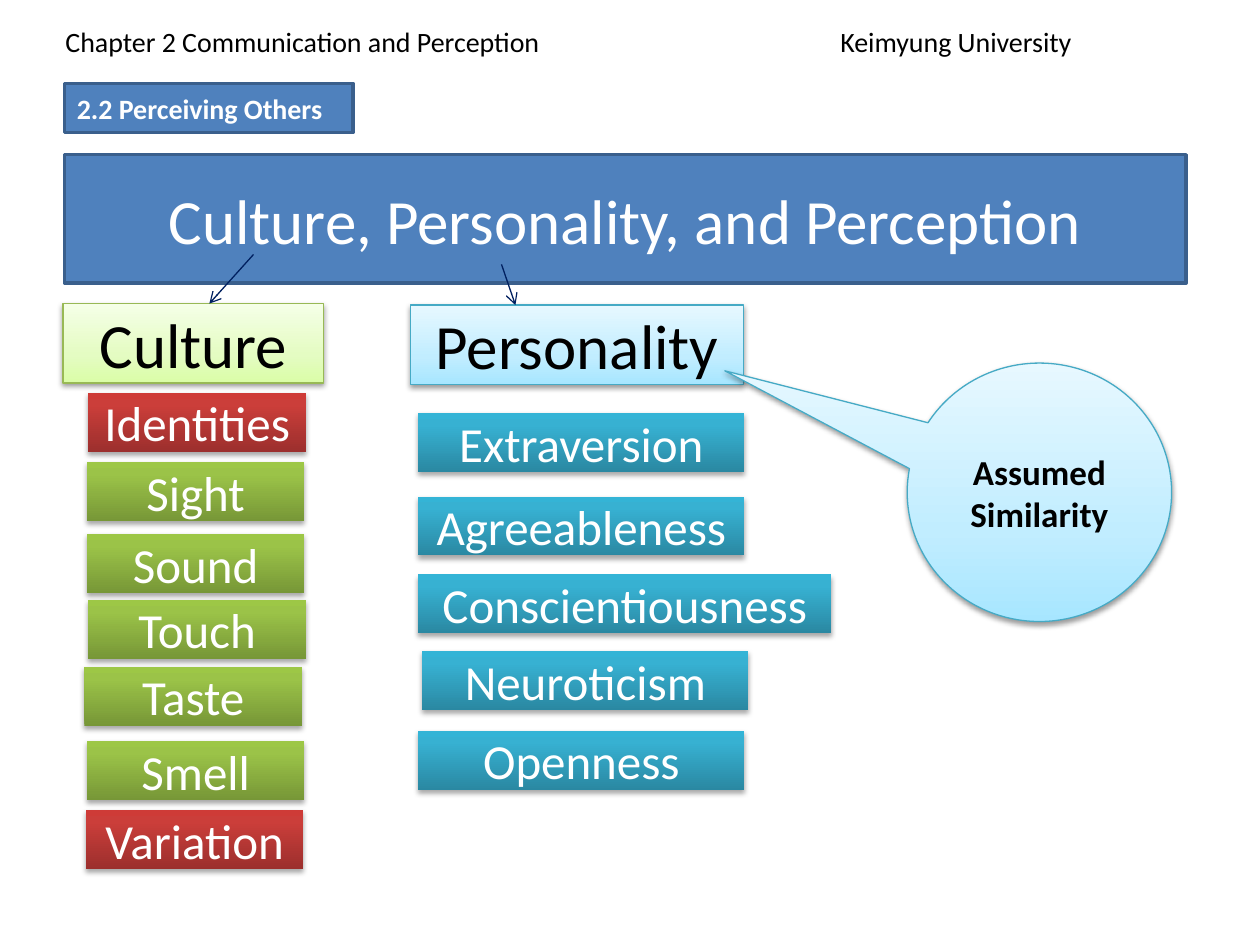
from copy import deepcopy
from dataclasses import dataclass
from typing import Optional

import lxml.etree
import pptx
import pptx.dml.color
import pptx.enum.shapes
import pptx.enum.text
import pptx.oxml.ns
import pptx.util

Cm = pptx.util.Cm
Pt = pptx.util.Pt
RGBColor = pptx.dml.color.RGBColor
qn = pptx.oxml.ns.qn
MSO_SHAPE = pptx.enum.shapes.MSO_SHAPE
PP_ALIGN = pptx.enum.text.PP_ALIGN
MSO_ANCHOR = pptx.enum.text.MSO_ANCHOR


@dataclass(frozen=True)
class Style:
    fill: tuple[str, ...]  # one colour, or three gradient colours from the bottom up
    text: str
    middle_stop: float = 0.8
    line: Optional[str] = None
    line_width: float = 0.75
    shadow: Optional[tuple[int, float]] = None  # opacity in percent, distance in points


@dataclass(frozen=True)
class Theme:
    font: str = "Calibri"
    black: str = "000000"
    arrow: str = "002060"
    small: int = 16
    callout: int = 20
    item: int = 28
    heading: int = 36
    banner: Style = Style(("4F81BD",), "FFFFFF", line="3A5F8C", line_width=2)
    pale_green: Style = Style(("DAFDA7", "E4FCC2", "F5FFE7"), "000000", 0.35, "98B955", shadow=(38, 1.6))
    pale_blue: Style = Style(("A7E6FF", "C1EDFF", "E7F8FF"), "000000", 0.35, "46AAC5", shadow=(38, 1.6))
    green: Style = Style(("779737", "9BC348", "9DC746"), "FFFFFF", shadow=(35, 1.8))
    red: Style = Style(("9C2F2D", "CB3E3A", "CE3B37"), "FFFFFF", shadow=(35, 1.8))
    blue: Style = Style(("2A88A2", "37B1D2", "34B4D6"), "FFFFFF", shadow=(35, 1.8))


THEME = Theme()


@dataclass(frozen=True)
class Box:
    text: str
    left: float
    top: float
    width: float
    height: float
    style: Style
    size: int
    bold: bool = False
    align: PP_ALIGN = PP_ALIGN.CENTER
    preset: MSO_SHAPE = MSO_SHAPE.RECTANGLE


def write_text(shape, text: str, *, size: int, color: str, bold: bool = False,
               align: PP_ALIGN = PP_ALIGN.LEFT, anchor: MSO_ANCHOR = MSO_ANCHOR.MIDDLE,
               tab: Optional[float] = None) -> None:
    frame = shape.text_frame
    frame.word_wrap = True
    frame.vertical_anchor = anchor
    paragraph = frame.paragraphs[0]
    paragraph.alignment = align
    if tab is not None:
        tabs = lxml.etree.SubElement(paragraph._p.get_or_add_pPr(), qn("a:tabLst"))
        lxml.etree.SubElement(tabs, qn("a:tab"), pos=str(Cm(tab)), algn="l")
    run = paragraph.add_run()
    run.text = text
    run.font.name = THEME.font
    run.font.size = Pt(size)
    run.font.bold = bold
    run.font.color.rgb = RGBColor.from_string(color)


def paint(shape, style: Style) -> None:
    properties = shape._element.spPr
    if len(style.fill) == 1:
        shape.fill.solid()
        shape.fill.fore_color.rgb = RGBColor.from_string(style.fill[0])
    else:
        shape.fill.gradient()
        shape.fill.gradient_angle = 90
        stop_list = properties.find(".//" + qn("a:gsLst"))
        stop_list.append(deepcopy(stop_list[-1]))
        positions = (0, style.middle_stop, 1)
        for stop, color, position in zip(shape.fill.gradient_stops, style.fill, positions):
            stop.color.rgb = RGBColor.from_string(color)
            stop.position = position

    if style.line:
        shape.line.color.rgb = RGBColor.from_string(style.line)
        shape.line.width = Pt(style.line_width)
    else:
        shape.line.fill.background()

    shape.shadow.inherit = False
    if style.shadow:
        opacity, distance = style.shadow
        shadow = lxml.etree.SubElement(
            properties.find(qn("a:effectLst")), qn("a:outerShdw"), blurRad=str(Pt(3.1)),
            dist=str(Pt(distance)), dir="5400000", rotWithShape="0")
        color = lxml.etree.SubElement(shadow, qn("a:srgbClr"), val=THEME.black)
        lxml.etree.SubElement(color, qn("a:alpha"), val=str(opacity * 1000))


def draw_box(slide, box: Box):
    shape = slide.shapes.add_shape(box.preset, Cm(box.left), Cm(box.top), Cm(box.width), Cm(box.height))
    paint(shape, box.style)
    write_text(shape, box.text, size=box.size, color=box.style.text, bold=box.bold, align=box.align)
    return shape


def draw_arrow(slide, start: tuple[float, float], end: tuple[float, float]) -> None:
    connector = slide.shapes.add_connector(
        pptx.enum.shapes.MSO_CONNECTOR.STRAIGHT, *map(Cm, start + end))
    connector.line.color.rgb = RGBColor.from_string(THEME.arrow)
    connector.line.width = Pt(0.75)
    properties = connector._element.spPr
    lxml.etree.SubElement(properties.find(qn("a:ln")), qn("a:tailEnd"), type="arrow")
    lxml.etree.SubElement(properties, qn("a:effectLst"))


def main() -> None:
    presentation = pptx.Presentation()
    presentation.slide_width, presentation.slide_height = Cm(25.4), Cm(19.05)
    slide = presentation.slides.add_slide(presentation.slide_layouts[6])

    # Running header
    header = slide.shapes.add_textbox(Cm(1.07), Cm(0.38), Cm(23.37), Cm(1.8))
    write_text(header, "Chapter 2 Communication and Perception\tKeimyung University",
               size=THEME.small, color=THEME.black, anchor=MSO_ANCHOR.TOP, tab=15.62)

    # Section label, title and column headings
    for box in (
        Box("2.2 Perceiving Others", 1.3, 1.68, 5.82, 0.99, THEME.banner, THEME.small, True, PP_ALIGN.LEFT),
        Box("Culture, Personality, and Perception", 1.3, 3.12, 22.61, 2.59, THEME.banner, THEME.heading),
        Box("Culture", 1.27, 6.12, 5.26, 1.6, THEME.pale_green, THEME.heading),
        Box("Personality", 8.28, 6.15, 6.71, 1.6, THEME.pale_blue, THEME.heading),
    ):
        draw_box(slide, box)

    # Culture column
    for text, left, top, style in (
        ("Identities", 1.78, 7.92, THEME.red),
        ("Sight", 1.75, 9.32, THEME.green),
        ("Sound", 1.75, 10.77, THEME.green),
        ("Touch", 1.78, 12.09, THEME.green),
        ("Taste", 1.7, 13.44, THEME.green),
        ("Smell", 1.75, 14.94, THEME.green),
        ("Variation", 1.73, 16.33, THEME.red),
    ):
        draw_box(slide, Box(text, left, top, 4.39, 1.19, style, THEME.item))

    # Personality column
    for text, left, top, width in (
        ("Extraversion", 8.43, 8.33, 6.58),
        ("Agreeableness", 8.43, 10.01, 6.58),
        ("Conscientiousness", 8.43, 11.58, 8.33),
        ("Neuroticism", 8.51, 13.13, 6.58),
        ("Openness", 8.43, 14.73, 6.58),
    ):
        draw_box(slide, Box(text, left, top, width, 1.19, THEME.blue, THEME.item))

    # Callout pointing at the personality heading
    callout = draw_box(slide, Box("Assumed Similarity", 18.29, 7.32, 5.33, 5.21, THEME.pale_blue,
                                  THEME.callout, True, preset=MSO_SHAPE.OVAL_CALLOUT))
    callout.adjustments[0], callout.adjustments[1] = -1.19, -0.47

    # Arrows from the title to the headings
    draw_arrow(slide, (5.11, 5.13), (4.22, 6.12))
    draw_arrow(slide, (10.11, 5.33), (10.39, 6.15))

    presentation.save("out.pptx")


if __name__ == "__main__":
    main()
